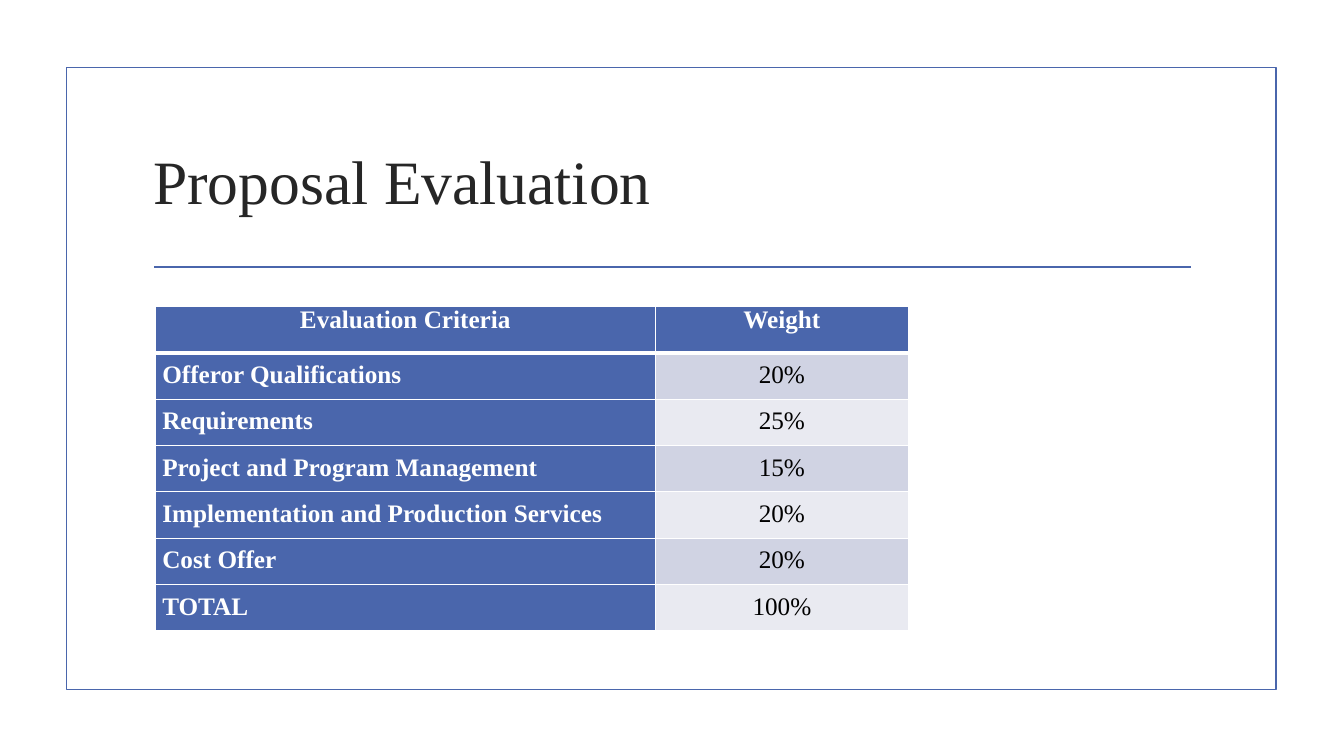
"""Build the Proposal Evaluation slide with its table of weighted criteria."""
import lxml.etree
import pptx
import pptx.dml.color
import pptx.enum.shapes
import pptx.enum.text
import pptx.oxml.ns
import pptx.util

Inches = pptx.util.Inches
Pt = pptx.util.Pt
ALIGN = pptx.enum.text.PP_ALIGN
ANCHOR = pptx.enum.text.MSO_ANCHOR
qn = pptx.oxml.ns.qn

BLUE = "4A66AC"
WHITE = "FFFFFF"
BANDS = ["E9EAF1", "D0D3E3"]
CRITERIA = [
    ("Evaluation Criteria", "Weight"),
    ("Offeror Qualifications", "20%"),
    ("Requirements", "25%"),
    ("Project and Program Management", "15%"),
    ("Implementation and Production Services", "20%"),
    ("Cost Offer", "20%"),
    ("TOTAL", "100%"),
]


def color(value):
    return pptx.dml.color.RGBColor.from_string(value)


def write(frame, text, size, fill, bold=False, align=ALIGN.LEFT, after=0):
    paragraph = frame.paragraphs[0]
    paragraph.text = text
    paragraph.alignment = align
    paragraph.space_after = Pt(after)
    paragraph.font.name = "Times New Roman"
    paragraph.font.size = Pt(size)
    paragraph.font.bold = bold
    paragraph.font.color.rgb = color(fill)


presentation = pptx.Presentation()
presentation.slide_width = Inches(13.33)
presentation.slide_height = Inches(7.5)
slide = presentation.slides.add_slide(presentation.slide_layouts[6])

border = slide.shapes.add_shape(
    pptx.enum.shapes.MSO_SHAPE.RECTANGLE,
    Inches(0.66), Inches(0.67), Inches(12), Inches(6.17))
border.shadow.inherit = False
border.fill.background()

rule = slide.shapes.add_connector(
    pptx.enum.shapes.MSO_CONNECTOR.STRAIGHT,
    Inches(1.53), Inches(2.65), Inches(11.81), Inches(2.65))
lxml.etree.SubElement(rule._element.spPr, qn("a:effectLst"))

for outlined in (border, rule):
    outlined.line.color.rgb = color(BLUE)
    outlined.line.width = Pt(1.25)

title = slide.shapes.add_textbox(
    Inches(1.42), Inches(1.07), Inches(10.5), Inches(1.43))
title.text_frame.word_wrap = True
title.text_frame.vertical_anchor = ANCHOR.MIDDLE
write(title.text_frame, "Proposal Evaluation", 44, "262626")

table = slide.shapes.add_table(
    len(CRITERIA), 2,
    Inches(1.54), Inches(3.04), Inches(7.47), Inches(3.22)).table
table.columns[0].width = Inches(4.96)
table.columns[1].width = Inches(2.51)

for row, values in enumerate(CRITERIA):
    table.rows[row].height = Inches(0.46)
    for column, text in enumerate(values):
        cell = table.cell(row, column)
        header = row == 0
        strong = header or column == 0
        cell.margin_left = cell.margin_right = Inches(0.07)
        cell.margin_top = Inches(0 if header else 0.08)
        cell.margin_bottom = 0
        cell.fill.solid()
        cell.fill.fore_color.rgb = color(BLUE if strong else BANDS[row % 2])
        write(cell.text_frame, text, 18, WHITE if strong else "000000",
              bold=strong, after=6,
              align=ALIGN.CENTER if header or column == 1 else ALIGN.LEFT)

        properties = cell._tc.get_or_add_tcPr()
        for position, side in enumerate(["lnL", "lnR", "lnT", "lnB"]):
            thick = (row, side) in [(0, "lnB"), (1, "lnT")]
            line = lxml.etree.Element(qn("a:" + side), w=str(Pt(3 if thick else 1)))
            solid = lxml.etree.SubElement(line, qn("a:solidFill"))
            lxml.etree.SubElement(solid, qn("a:srgbClr"), val=WHITE)
            properties.insert(position, line)

presentation.save("out.pptx")
